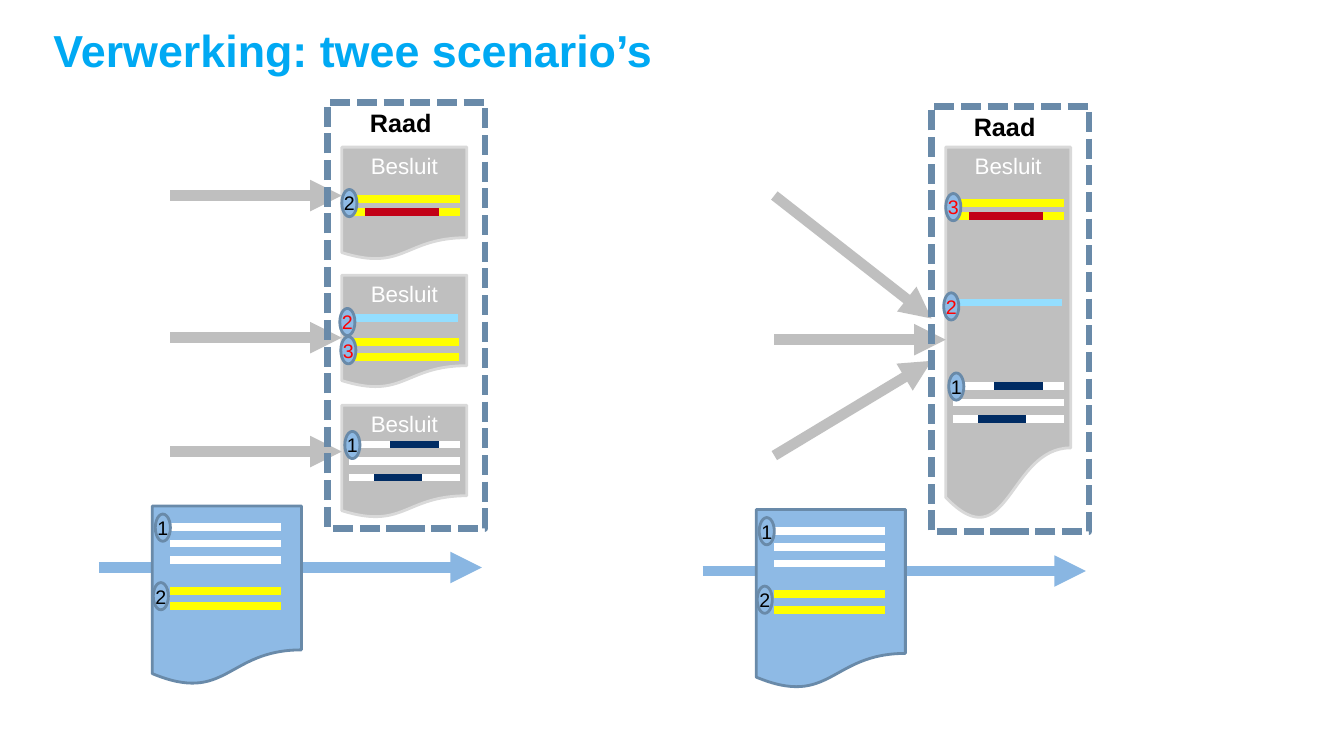
from lxml import etree
from pptx import Presentation
from pptx.dml.color import RGBColor
from pptx.enum.dml import MSO_LINE
from pptx.enum.shapes import MSO_CONNECTOR, MSO_SHAPE
from pptx.enum.text import MSO_ANCHOR, MSO_AUTO_SIZE, PP_ALIGN
from pptx.oxml.ns import qn
from pptx.util import Inches, Pt

DOCUMENT, OVAL, FRAME = (MSO_SHAPE.FLOWCHART_DOCUMENT, MSO_SHAPE.OVAL,
                         MSO_SHAPE.RECTANGLE)
STRAIGHT = MSO_CONNECTOR.STRAIGHT
DASHED = MSO_LINE.SQUARE_DOT
TOP, MIDDLE = MSO_ANCHOR.TOP, MSO_ANCHOR.MIDDLE
LEFT, CENTER = PP_ALIGN.LEFT, PP_ALIGN.CENTER
FIT_SHAPE = MSO_AUTO_SIZE.SHAPE_TO_FIT_TEXT

TITLE_BLUE = RGBColor(0x00, 0xA9, 0xF3)
ARROW_BLUE = RGBColor(0x89, 0xB6, 0xE2)
PAPER_BLUE = RGBColor(0x8E, 0xBA, 0xE5)
EDGE_BLUE = RGBColor(0x69, 0x8A, 0xA9)
LIGHT_BLUE = RGBColor(0x94, 0xDE, 0xFF)
NAVY = RGBColor(0x00, 0x2C, 0x64)
GREY = RGBColor(0xBF, 0xBF, 0xBF)
EDGE_GREY = RGBColor(0xD9, 0xD9, 0xD9)
YELLOW = RGBColor(0xFF, 0xFF, 0x00)
DARK_RED = RGBColor(0xC2, 0x00, 0x16)
RED = RGBColor(0xFF, 0x00, 0x00)
WHITE = RGBColor(0xFF, 0xFF, 0xFF)
BLACK = RGBColor(0x00, 0x00, 0x00)

# Grid: square cells of a tenth of an inch, counted from each scenario's origin
CELL = Inches(0.1)
LEFT_ORIGIN, RIGHT_ORIGIN = (0, 0), (59.9, 0.35)
PASSAGE_LENGTH, PASSAGE_STEP = 11, 1.63
ARROW_START, DECISION_LEFT, FRAME_LEFT = 16.9, 33.9, 32.5


def on_grid(origin, column, row):
    return round((origin[0] + column) * CELL), round((origin[1] + row) * CELL)


def set_format(target, values):
    for name, value in values.items():
        setattr(target, name, value)


def write(shape, text, size, color, bold=False, align=CENTER, **frame_format):
    frame = shape.text_frame
    set_format(frame, frame_format)
    paragraph = frame.paragraphs[0]
    paragraph.alignment = align
    run = paragraph.add_run()
    run.text = text
    set_format(run.font, {"name": "Arial", "size": Pt(size), "bold": bold})
    run.font.color.rgb = color
    return paragraph


def add_block(slide, origin, kind, column, row, width, height, fill, edge, weight=2):
    shape = slide.shapes.add_shape(kind, *on_grid(origin, column, row),
                                   round(width * CELL), round(height * CELL))
    shape.shadow.inherit = False
    if fill is None:
        shape.fill.background()
    else:
        shape.fill.solid()
        shape.fill.fore_color.rgb = fill
    shape.line.color.rgb = edge
    shape.line.width = Pt(weight)
    return shape


def add_line(slide, origin, start, end, color, weight=5.5, arrow=False):
    line = slide.shapes.add_connector(STRAIGHT, *on_grid(origin, *start),
                                      *on_grid(origin, *end))
    line.line.color.rgb = color
    line.line.width = Pt(weight)
    if arrow:
        etree.SubElement(line.line._get_or_add_ln(), qn("a:tailEnd"), type="triangle")
    etree.SubElement(line._element.spPr, qn("a:effectLst"))


def add_arrow(slide, origin, start, end, color):
    add_line(slide, origin, start, end, color, 7.5, True)


def add_passages(slide, origin, column, row, color, count=1, step=PASSAGE_STEP,
                 length=PASSAGE_LENGTH):
    for index in range(count):
        level = row + index * step
        add_line(slide, origin, (column, level), (column + length, level), color)


def add_badge(slide, origin, column, row, number, color=BLACK):
    badge = add_block(slide, origin, OVAL, column, row, 1.5, 2.7,
                      PAPER_BLUE, EDGE_BLUE)
    write(badge, number, 14, color, vertical_anchor=MIDDLE, word_wrap=False,
          margin_left=0, margin_right=0, margin_top=0, margin_bottom=0)


def add_decision(slide, origin, row, height):
    decision = add_block(slide, origin, DOCUMENT, DECISION_LEFT, row, 12.4, height,
                         GREY, EDGE_GREY)
    write(decision, "Besluit", 16, WHITE, vertical_anchor=TOP, word_wrap=True)


def add_council(slide, origin):
    frame = add_block(slide, origin, FRAME, FRAME_LEFT, 10.2, 15.6, 42.2, None,
                      EDGE_BLUE, 4.75)
    frame.line.dash_style = DASHED
    label = slide.shapes.add_textbox(*on_grid(origin, 35.7, 10.2),
                                     round(8.2 * CELL), round(4 * CELL))
    write(label, "Raad", 18, BLACK, bold=True, align=LEFT,
          word_wrap=False, auto_size=FIT_SHAPE)


def add_proposal(slide, origin):
    add_arrow(slide, origin, (9.8, 56.3), (47.8, 56.3), ARROW_BLUE)
    add_block(slide, origin, DOCUMENT, 15.1, 50.2, 14.8, 17.8, PAPER_BLUE, EDGE_BLUE)
    add_passages(slide, origin, 16.9, 52.3, WHITE, 3)
    add_passages(slide, origin, 16.9, 58.6, YELLOW, 2, 1.55)
    add_badge(slide, origin, 15.2, 57.8, "2")
    add_badge(slide, origin, 15.4, 51, "1")


def add_amended_text(slide, origin, row, badge_row, number, color):
    """Two yellow passages, the second partly struck in red."""
    add_passages(slide, origin, 34.6, row, YELLOW, 2, 1.25)
    add_passages(slide, origin, 36.2, row + 1.25, DARK_RED, length=7.3)
    add_badge(slide, origin, 33.9, badge_row, number, color)


def add_white_text(slide, origin, row):
    """Three white passages with navy changes in the first and last."""
    add_passages(slide, origin, 34.6, row, WHITE, 3)
    add_passages(slide, origin, 38.7, row, NAVY, length=4.8)
    add_passages(slide, origin, 37.1, row + 2 * PASSAGE_STEP, NAVY, length=4.8)
    add_badge(slide, origin, 34.2, row - 1.3, "1")


def add_new_text(slide, origin, row):
    add_passages(slide, origin, 34.4, row, LIGHT_BLUE)
    add_badge(slide, origin, 33.7, row - 0.95, "2", RED)


def add_separate_scenario(slide, origin):
    add_proposal(slide, origin)
    for decision_row, arrow_row in ((14.6, 19.4), (27.3, 33.5), (40.2, 44.8)):
        add_decision(slide, origin, decision_row, 11.2)
        add_arrow(slide, origin, (ARROW_START, arrow_row),
                  (DECISION_LEFT, arrow_row), GREY)
    add_council(slide, origin)
    add_amended_text(slide, origin, 19.75, 18.8, "2", BLACK)
    add_new_text(slide, origin, 31.55)
    add_passages(slide, origin, 34.5, 33.9, YELLOW, 2, 1.5)
    add_badge(slide, origin, 33.8, 33.4, "3", RED)
    add_white_text(slide, origin, 44.1)


def add_combined_scenario(slide, origin):
    add_proposal(slide, origin)
    add_decision(slide, origin, 14.25, 37.2)
    for start_row, end in ((33.35, (DECISION_LEFT, 33.35)),
                           (19.05, (FRAME_LEFT, 31.25)),
                           (44.85, (FRAME_LEFT, 35.45))):
        add_arrow(slide, origin, (ARROW_START, start_row), end, GREY)
    add_council(slide, origin)
    add_amended_text(slide, origin, 19.8, 18.85, "3", RED)
    add_new_text(slide, origin, 29.65)
    add_white_text(slide, origin, 37.95)


def add_title(slide):
    title = slide.shapes.title
    set_format(title, {"left": Inches(0.43), "top": Inches(0.13),
                       "width": Inches(10.97), "height": Inches(0.79)})
    paragraph = write(title, "Verwerking: twee scenario’s", 32, TITLE_BLUE,
                      bold=True, align=LEFT, vertical_anchor=MIDDLE)
    paragraph.line_spacing = 0.9


def main():
    presentation = Presentation()
    presentation.slide_width = Inches(13.33)
    presentation.slide_height = Inches(7.5)
    slide = presentation.slides.add_slide(presentation.slide_layouts[5])
    add_title(slide)
    add_separate_scenario(slide, LEFT_ORIGIN)
    add_combined_scenario(slide, RIGHT_ORIGIN)
    presentation.save("out.pptx")


if __name__ == "__main__":
    main()
